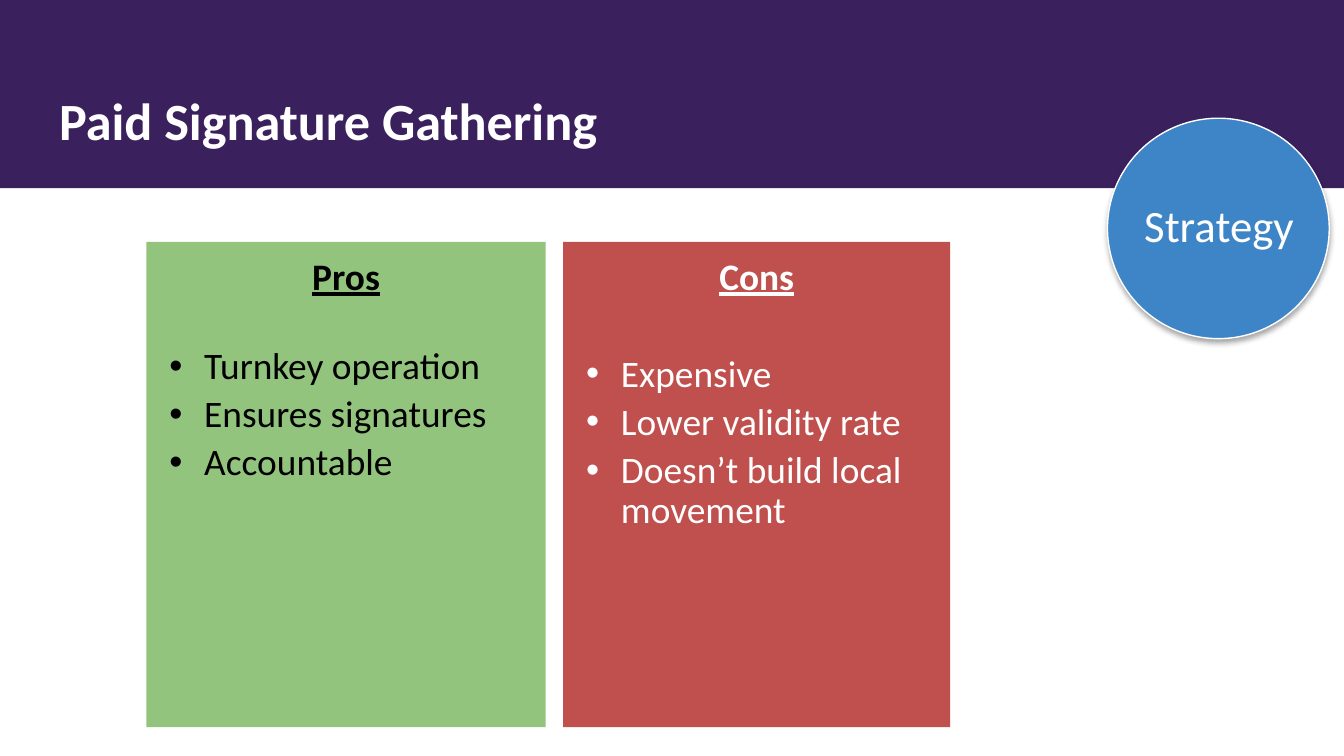
"""Build the slide weighing the pros and cons of paid signature gathering."""
from lxml import etree
from pptx import Presentation
from pptx.dml.color import RGBColor
from pptx.enum.shapes import MSO_SHAPE
from pptx.enum.text import MSO_ANCHOR, MSO_AUTO_SIZE, PP_ALIGN
from pptx.oxml import parse_xml
from pptx.oxml.ns import nsdecls, qn
from pptx.util import Inches, Pt

RECTANGLE, OVAL = MSO_SHAPE.RECTANGLE, MSO_SHAPE.OVAL
LEFT, CENTER = PP_ALIGN.LEFT, PP_ALIGN.CENTER
TOP, MIDDLE = MSO_ANCHOR.TOP, MSO_ANCHOR.MIDDLE
NO_FIT = MSO_AUTO_SIZE.NONE

PURPLE = RGBColor(0x3B, 0x20, 0x5E)
GREEN = RGBColor(0x93, 0xC4, 0x7D)
RED = RGBColor(0xBF, 0x50, 0x4D)
BLUE = RGBColor(0x3D, 0x85, 0xC6)
WHITE = RGBColor(0xFF, 0xFF, 0xFF)
BLACK = RGBColor(0x00, 0x00, 0x00)

SLIDE_WIDTH = 10
SLIDE_HEIGHT = SLIDE_WIDTH * 9 / 16
FONT = "Calibri"
TITLE = "Paid Signature Gathering"
BADGE = "Strategy"
PANEL_TOP, PANEL_HEIGHT = 1.8, 3.61
BULLET_GAP = 4.2
PANELS = [
    {"heading": "Pros", "left": 1.09, "width": 2.97, "fill": GREEN, "color": BLACK,
     "heading_gap": 26.2,
     "points": ["Turnkey operation", "Ensures signatures", "Accountable"]},
    {"heading": "Cons", "left": 4.19, "width": 2.88, "fill": RED, "color": WHITE,
     "heading_gap": 30.4,
     "points": ["Expensive", "Lower validity rate", "Doesn’t build local movement"]},
]


def add_filled(slide, kind, bounds, fill):
    shape = slide.shapes.add_shape(kind, *map(Inches, bounds))
    shape.shadow.inherit = False
    shape.fill.solid()
    shape.fill.fore_color.rgb = fill
    shape.line.fill.background()
    return shape


def set_frame(frame, side, upright, anchor):
    frame.word_wrap = True
    frame.auto_size = NO_FIT
    frame.vertical_anchor = anchor
    frame.margin_left = frame.margin_right = Inches(side)
    frame.margin_top = frame.margin_bottom = Inches(upright)


def write(para, text, size, color, align, bold=False, underline=False):
    para.text = text
    para.alignment = align
    for span in para.runs:
        span.font.name = FONT
        span.font.size = Pt(size)
        span.font.color.rgb = color
        span.font.bold = bold
        span.font.underline = underline


def add_bullet(para, color):
    properties = para._p.get_or_add_pPr()
    properties.set("marL", str(Inches(0.31)))
    properties.set("indent", str(Inches(-0.26)))
    bullet_color = etree.SubElement(properties, qn("a:buClr"))
    etree.SubElement(bullet_color, qn("a:srgbClr"), val=str(color))
    etree.SubElement(properties, qn("a:buFont"), typeface="Arial")
    etree.SubElement(properties, qn("a:buChar"), char="•")


def add_title(slide):
    title = slide.shapes.title
    title.left, title.top, title.width, title.height = map(Inches, (0.34, 0.55, 9.32, 0.68))
    set_frame(title.text_frame, 0.1, 0.1, MIDDLE)
    write(title.text_frame.paragraphs[0], TITLE, 28, WHITE, LEFT, bold=True)
    band = add_filled(slide, RECTANGLE, (0, 0, SLIDE_WIDTH, 1.4), PURPLE)
    title.element.addprevious(band.element)


def add_panel(slide, panel):
    bounds = (panel["left"], PANEL_TOP, panel["width"], PANEL_HEIGHT)
    frame = add_filled(slide, RECTANGLE, bounds, panel["fill"]).text_frame
    set_frame(frame, 0.12, 0.12, TOP)
    heading = frame.paragraphs[0]
    write(heading, panel["heading"], 20, panel["color"], CENTER, bold=True, underline=True)
    heading.line_spacing = 0.9
    for index, point in enumerate(panel["points"]):
        para = frame.add_paragraph()
        write(para, point, 20, panel["color"], LEFT)
        para.line_spacing = 0.9
        para.space_before = Pt(BULLET_GAP if index else panel["heading_gap"])
        add_bullet(para, panel["color"])


def add_badge(slide):
    circle = add_filled(slide, OVAL, (8.24, 0.88, 1.65, 1.64), BLUE)
    circle.line.color.rgb = WHITE
    circle.line.width = Pt(0.75)
    effects = circle.element.spPr.find(qn("a:effectLst"))
    effects.append(parse_xml(
        f'<a:outerShdw {nsdecls("a")} blurRad="{Pt(3.1)}" dist="{Pt(1.8)}" '
        'dir="5400000" rotWithShape="0"><a:srgbClr val="000000">'
        '<a:alpha val="35000"/></a:srgbClr></a:outerShdw>'))
    box = slide.shapes.add_textbox(*map(Inches, (8.3, 1.42, 1.54, 0.56)))
    set_frame(box.text_frame, 0.1, 0.05, TOP)
    write(box.text_frame.paragraphs[0], BADGE, 24, WHITE, CENTER)


def main():
    deck = Presentation()
    deck.slide_width, deck.slide_height = Inches(SLIDE_WIDTH), Inches(SLIDE_HEIGHT)
    slide = deck.slides.add_slide(deck.slide_layouts[5])
    add_title(slide)
    for panel in PANELS:
        add_panel(slide, panel)
    add_badge(slide)
    deck.save("out.pptx")


if __name__ == "__main__":
    main()
